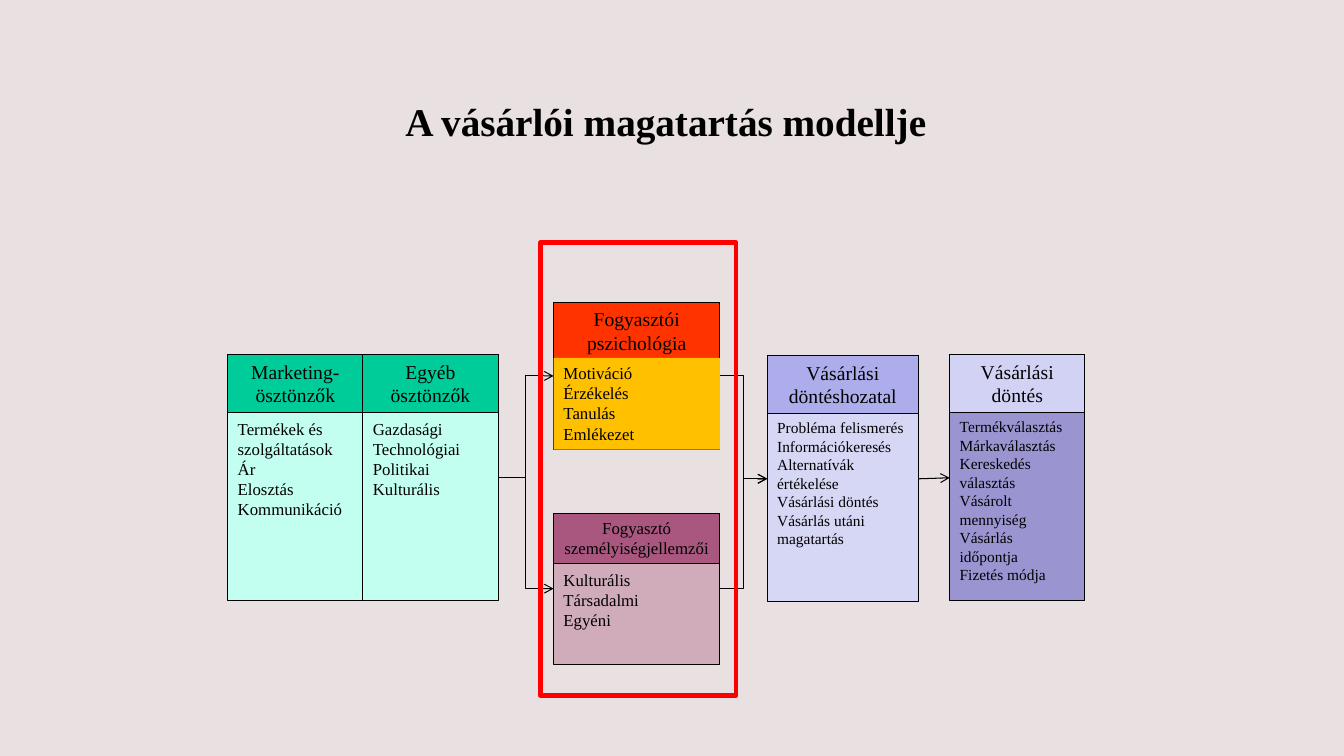
import pptx
import pptx.dml.color
import pptx.enum.dml
import pptx.enum.shapes
import pptx.enum.text
import pptx.oxml
import pptx.oxml.ns
import pptx.util

Inches = pptx.util.Inches
ALIGN = pptx.enum.text.PP_ALIGN
FONT = "Times New Roman"
BLACK = "000000"
RIGHT_SITE, LEFT_SITE = 3, 1

# name: (box, frame fill, header height, header fill, header size, header,
#        body top, body height, body fill, body size, body lines)
# A fill is a hex string, or a hex string and an opacity in percent.
BLOCKS = {
    "marketing": ((2.26, 3.52, 1.34, 2.44), "C2FFF0", 0.57, "00CC99", 14, "Marketing-ösztönzők",
                  0.58, 1.11, None, 12,
                  ["Termékek és szolgáltatások", "Ár", "Elosztás", "Kommunikáció"]),
    "other": ((3.6, 3.52, 1.34, 2.44), "C2FFF0", 0.57, "00CC99", 14, "Egyéb ösztönzők",
              0.58, 0.91, None, 12,
              ["Gazdasági", "Technológiai", "Politikai", "Kulturális"]),
    "psychology": ((5.49, 3, 1.65, 1.46), None, 0.57, "FF3300", 14, "Fogyasztói pszichológia",
                   0.55, 0.91, "FFC000", 12,
                   ["Motiváció", "Érzékelés", "Tanulás", "Emlékezet"]),
    "personality": ((5.49, 5.09, 1.65, 1.5), ("993366", 30), 0.5, ("993366", 70), 12,
                    "Fogyasztó személyiségjellemzői",
                    0.51, 0.71, None, 12,
                    ["Kulturális", "Társadalmi", "Egyéni"]),
    "process": ((7.61, 3.53, 1.5, 2.44), "D6D6F5", 0.57, "ADADEB", 14, "Vásárlási döntéshozatal",
                0.57, 1.4, None, 11,
                ["Probléma felismerés", "Információkeresés", "Alternatívák értékelése",
                 "Vásárlási döntés", "Vásárlás utáni magatartás"]),
    "decision": ((9.42, 3.52, 1.34, 2.44), ("2D2DB9", 42), 0.57, "D2D2F4", 14, "Vásárlási döntés",
                 0.57, 1.58, None, 11,
                 ["Termékválasztás", "Márkaválasztás", "Kereskedés választás",
                  "Vásárolt mennyiség", "Vásárlás időpontja", "Fizetés módja"]),
}

ARROWS = [("other", "personality"), ("other", "psychology"), ("psychology", "process"),
          ("personality", "process"), ("process", "decision")]


def colour(value):
    return pptx.dml.color.RGBColor.from_string(value)


def set_fill(shape, fill):
    if fill is None:
        shape.fill.background()
        return
    value, opacity = (fill, 100) if isinstance(fill, str) else fill
    shape.fill.solid()
    shape.fill.fore_color.rgb = colour(value)
    if opacity < 100:
        tone = shape.fill._xPr.find(".//" + pptx.oxml.ns.qn("a:srgbClr"))
        tone.append(pptx.oxml.parse_xml(
            f'<a:alpha {pptx.oxml.ns.nsdecls("a")} val="{opacity * 1000}"/>'))


def add_box(slide, box, fill, line=BLACK, weight=0.75):
    shape = slide.shapes.add_shape(pptx.enum.shapes.MSO_SHAPE.RECTANGLE, *map(Inches, box))
    shape.shadow.inherit = False
    set_fill(shape, fill)
    if line is None:
        shape.line.fill.background()
    else:
        shape.line.color.rgb = colour(line)
        shape.line.width = pptx.util.Pt(weight)
    return shape


def write(shape, lines, size, align=ALIGN.LEFT, bold=False, wrap=True):
    frame = shape.text_frame
    frame.word_wrap = wrap
    frame.vertical_anchor = pptx.enum.text.MSO_ANCHOR.TOP
    frame.text = "\n".join(lines)
    for paragraph in frame.paragraphs:
        paragraph.alignment = align
        paragraph.font.name = FONT
        paragraph.font.size = pptx.util.Pt(size)
        paragraph.font.bold = bold
        paragraph.font.color.rgb = colour(BLACK)


def add_title(slide, box, text):
    title = slide.shapes.title
    title.left, title.top, title.width, title.height = map(Inches, box)
    write(title, [text], 28, bold=True, wrap=False)


def add_block(slide, box, fill, head_height, head_fill, head_size, head,
              body_top, body_height, body_fill, body_size, lines):
    """Draw a framed block with a header and a list; return its frame."""
    left, top, width, _ = box
    frame = add_box(slide, box, fill)
    header = add_box(slide, (left, top, width, head_height), head_fill)
    write(header, [head], head_size, ALIGN.CENTER)
    body_box = (left, top + body_top, width, body_height)
    if body_fill:
        body = add_box(slide, body_box, body_fill, line=None)
    else:
        body = slide.shapes.add_textbox(*map(Inches, body_box))
    write(body, lines, body_size)
    return frame


def add_arrow(slide, start, end, kind):
    arrow = slide.shapes.add_connector(kind, 0, 0, 0, 0)
    arrow.begin_connect(start, RIGHT_SITE)
    arrow.end_connect(end, LEFT_SITE)
    arrow.line.color.rgb = colour(BLACK)
    arrow.line.width = pptx.util.Pt(0.75)
    names = pptx.oxml.ns.nsdecls("a")
    arrow.line._get_or_add_ln().append(
        pptx.oxml.parse_xml(f'<a:tailEnd {names} type="arrow"/>'))
    arrow._element.spPr.append(pptx.oxml.parse_xml(f"<a:effectLst {names}/>"))


def build_model_slide(deck):
    slide = deck.slides.add_slide(deck.slide_layouts[5])
    slide.background.fill.solid()
    slide.background.fill.fore_color.rgb = colour("E9E1E1")

    # Blocks of the model
    frames = {name: add_block(slide, *block) for name, block in BLOCKS.items()}

    # Arrows between the blocks
    kinds = pptx.enum.shapes.MSO_CONNECTOR
    for start, end in ARROWS:
        kind = kinds.STRAIGHT if end == "decision" else kinds.ELBOW
        add_arrow(slide, frames[start], frames[end], kind)

    # Title and the red highlight around the consumer
    add_title(slide, (3.92, 0.92, 5.43, 0.57), "A vásárlói magatartás modellje")
    add_box(slide, (5.36, 2.41, 1.94, 4.49), None, line="FF0000", weight=3.5)


def main():
    deck = pptx.Presentation()
    deck.slide_width, deck.slide_height = Inches(13.33), Inches(7.5)
    build_model_slide(deck)
    deck.save("out.pptx")


if __name__ == "__main__":
    main()
